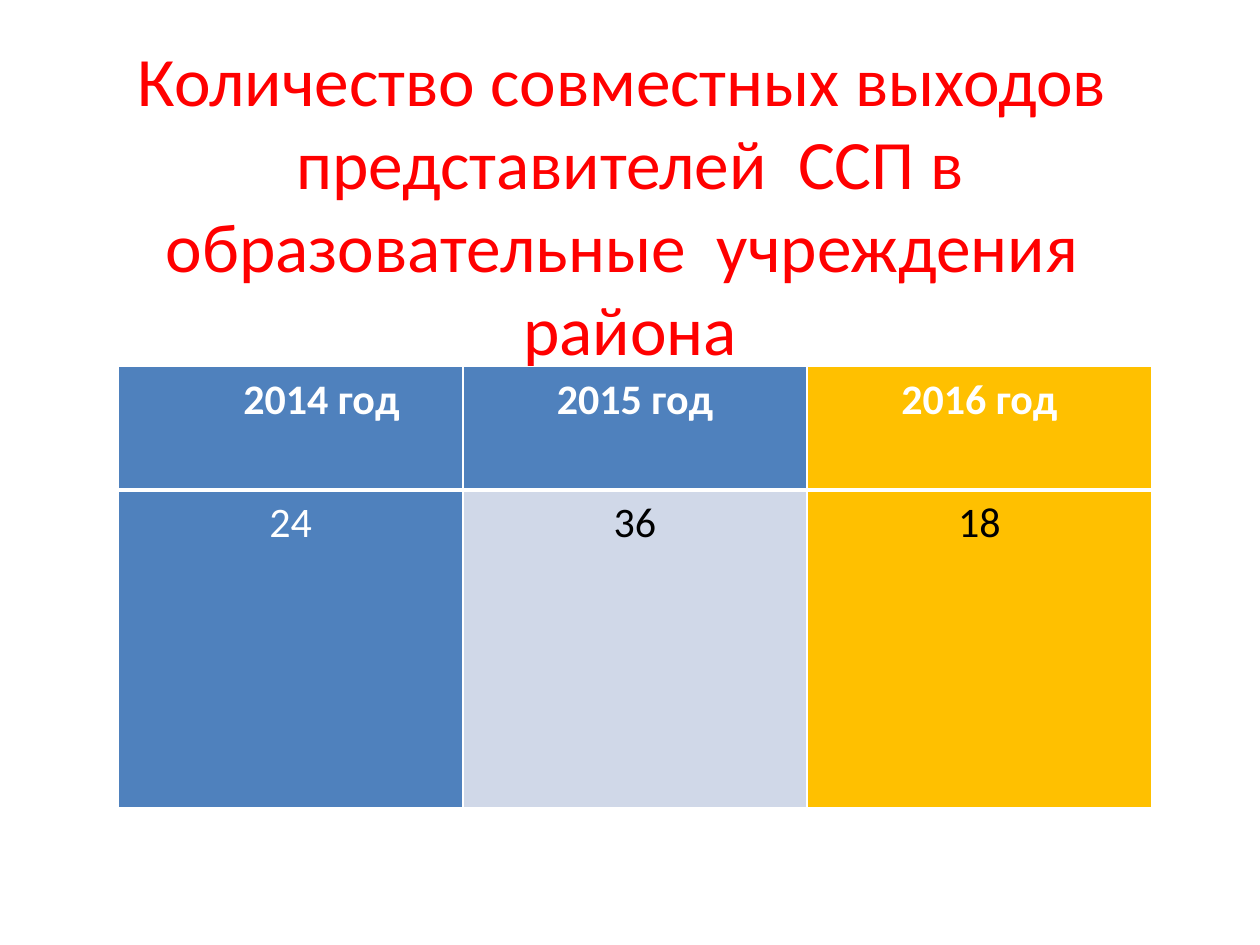
"""Builds a slide with a title and a table of joint school visits by year."""
from dataclasses import dataclass

from lxml import etree
from pptx import Presentation
from pptx import util as u
from pptx.dml.color import RGBColor
from pptx.enum import text
from pptx.oxml import ns


@dataclass(frozen=True)
class Theme:
    """Colours, font and type sizes of the slide."""
    font: str = "Calibri"
    title_size: float = 39.6
    cell_size: float = 24
    red: str = "FF0000"
    blue: str = "4F81BD"
    pale: str = "D0D8E8"
    amber: str = "FFC000"
    white: str = "FFFFFF"
    black: str = "000000"


class SlideBuilder:
    """Holds the theme and the current slide."""

    def __init__(self, deck, theme):
        self.theme = theme
        self.width, self.height = deck.slide_width, deck.slide_height
        self.slide = deck.slides.add_slide(deck.slide_layouts[6])

    def area(self, left, top, width, height):
        """Turns shares of the slide's size into lengths."""
        return (int(left * self.width), int(top * self.height),
                int(width * self.width), int(height * self.height))

    def set_text(self, para, words, size, color, bold=False):
        """Puts centred, styled words into a paragraph."""
        para.text = words
        para.alignment = text.PP_ALIGN.CENTER
        para.font.name = self.theme.font
        para.font.size = u.Pt(size)
        para.font.bold = bold
        para.font.color.rgb = RGBColor.from_string(color)

    def title(self, words, area):
        """Adds the heading."""
        frame = self.slide.shapes.add_textbox(*self.area(*area)).text_frame
        frame.word_wrap = True
        frame.vertical_anchor = text.MSO_ANCHOR.MIDDLE
        frame.margin_top = frame.margin_bottom = 0
        self.set_text(frame.paragraphs[0], words, self.theme.title_size, self.theme.red)

    def border(self, cell, **widths):
        """Draws white cell edges, with widths in points by side."""
        props = cell._tc.get_or_add_tcPr()
        for side, width in widths.items():
            line = etree.SubElement(props, ns.qn(f"a:ln{side}"), w=str(u.Pt(width)))
            fill = etree.SubElement(line, ns.qn("a:solidFill"))
            etree.SubElement(fill, ns.qn("a:srgbClr"), val=self.theme.white)

    def cell(self, cell, words, fill, color, header):
        """Fills and styles one table cell."""
        self.border(cell, L=1, R=1, T=1 if header else 3, B=3 if header else 1)
        cell.fill.solid()
        cell.fill.fore_color.rgb = RGBColor.from_string(fill)
        cell.margin_left = cell.margin_right = u.Inches(0.07)
        cell.margin_top = cell.margin_bottom = 0
        para = cell.text_frame.paragraphs[0]
        self.set_text(para, words, self.theme.cell_size, color, header)
        para.line_spacing = 1.15

    def table(self, rows, area, row_shares):
        """Adds a table of (words, fill, colour) rows under a header row."""
        box = self.area(*area)
        table = self.slide.shapes.add_table(len(rows), len(rows[0]), *box).table
        table.first_row = table.horz_banding = False
        for r, (row, share) in enumerate(zip(rows, row_shares)):
            table.rows[r].height = int(box[3] * share)
            for c, content in enumerate(row):
                self.cell(table.cell(r, c), *content, header=r == 0)
        return table


def main():
    """Builds and saves the deck."""
    deck = Presentation()
    deck.slide_width, deck.slide_height = u.Inches(10), u.Inches(7.5)
    theme = Theme()
    page = SlideBuilder(deck, theme)
    page.title("Количество совместных выходов  представителей  ССП в "
               "образовательные  учреждения  района", (0.05, 0.04, 0.9, 0.35))
    table = page.table(
        [[("2014 год", theme.blue, theme.white),
          ("2015 год", theme.blue, theme.white),
          ("2016 год", theme.amber, theme.white)],
         [("24", theme.blue, theme.white),
          ("36", theme.pale, theme.black),
          ("18", theme.amber, theme.black)]],
        (0.094, 0.388, 0.82, 0.467), (0.28, 0.72))
    first = table.cell(0, 0).text_frame.paragraphs[0]
    first._p.get_or_add_pPr().set("indent", str(u.Inches(0.49)))
    deck.save("out.pptx")


if __name__ == "__main__":
    main()
